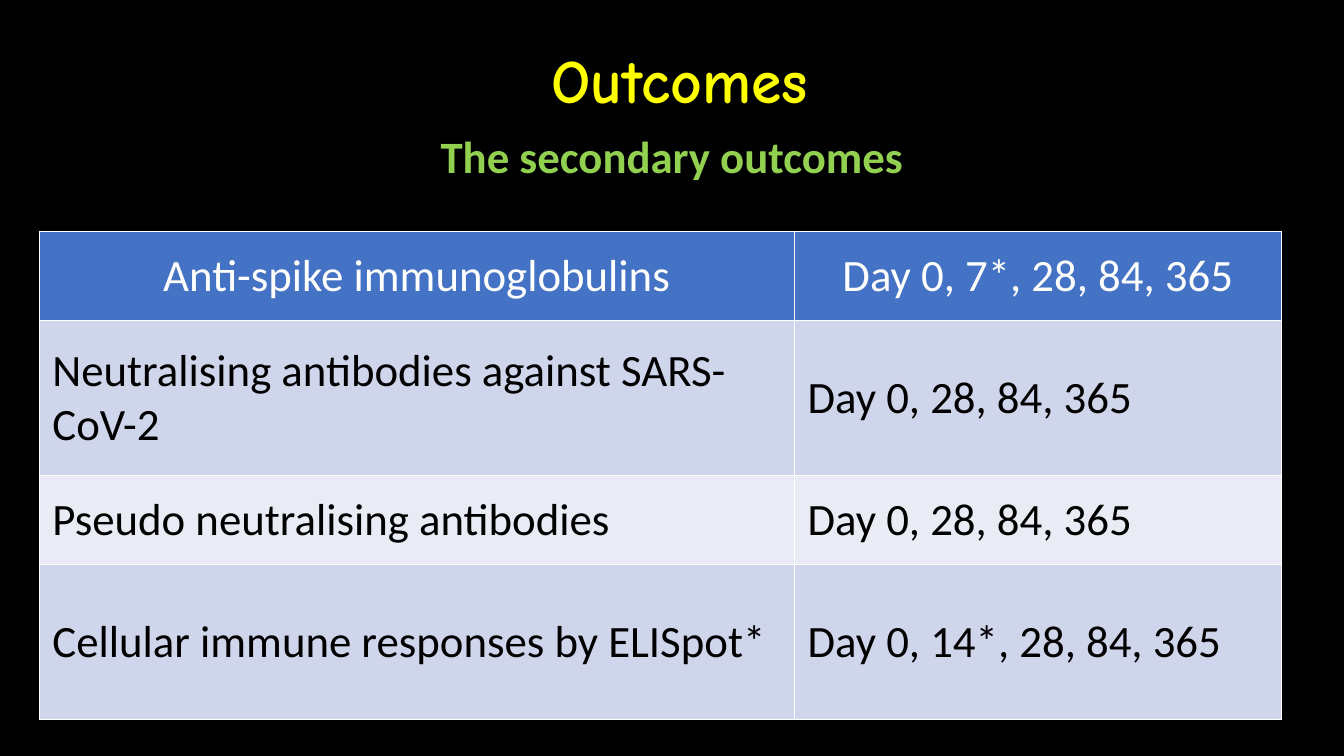
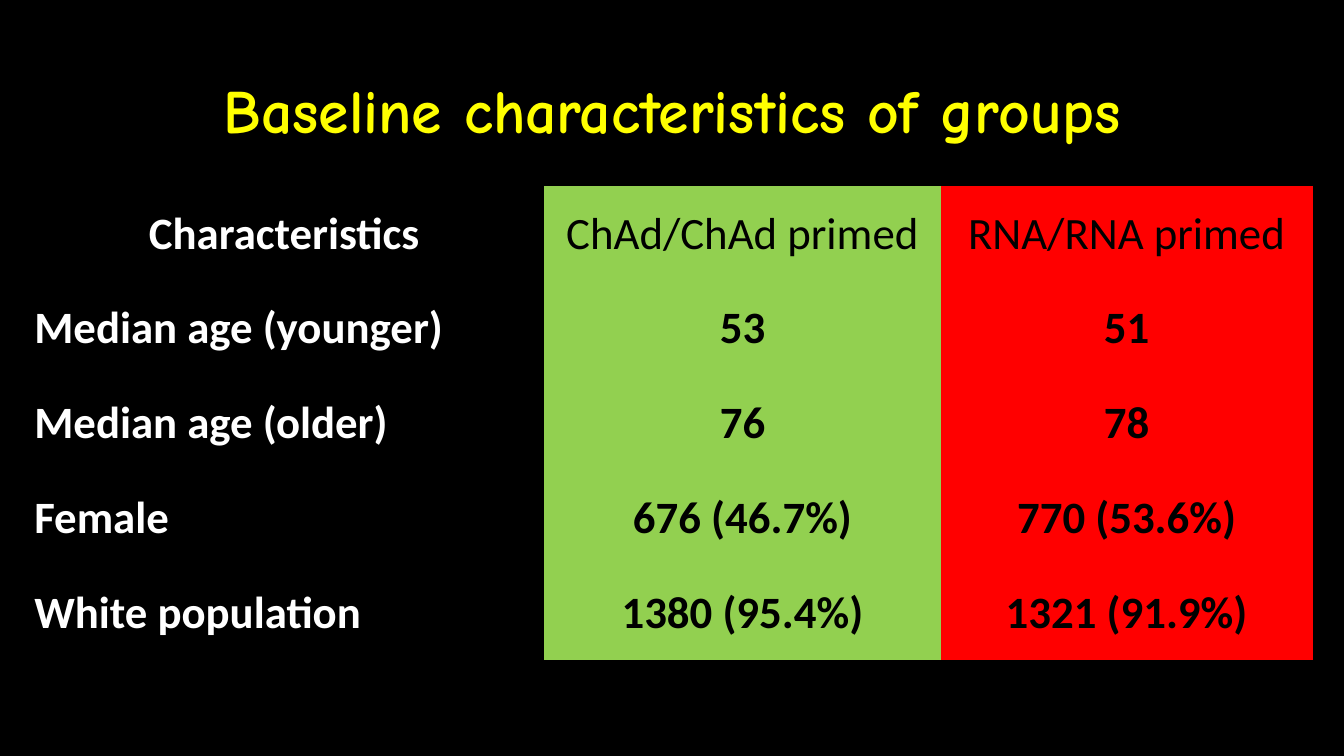
"""Build two slides of trial tables: secondary outcomes and baseline characteristics."""
from lxml import etree
from pptx import Presentation
from pptx.dml.color import RGBColor
from pptx.enum.text import MSO_ANCHOR, MSO_AUTO_SIZE, PP_ALIGN
from pptx.oxml.ns import qn
from pptx.util import Pt

PX = 9144
LEFT, MID = PP_ALIGN.LEFT, PP_ALIGN.CENTER
CENTRE = MSO_ANCHOR.MIDDLE
FIXED, GROW = MSO_AUTO_SIZE.NONE, MSO_AUTO_SIZE.SHAPE_TO_FIT_TEXT
TITLE_ONLY = 5
INK = {
    "black": "000000", "white": "FFFFFF", "yellow": "FFFF00", "green": "92D050",
    "red": "FF0000", "blue": "4472C4", "mist": "CFD5EA", "pale": "E9EBF5",
}


def write(frame, text, size=32, font="Calibri", color="black", bold=False,
          align=MID, line=None, gap=None):
    """Put one formatted paragraph into a text frame."""
    frame.word_wrap = True
    para = frame.paragraphs[0]
    para.alignment = align
    para.line_spacing = line
    para.space_before = para.space_after = gap
    run = para.add_run()
    run.text = text
    run.font.size, run.font.name, run.font.bold = Pt(size), font, bold
    run.font.color.rgb = RGBColor.from_string(INK[color])


def outline(cell, color=None):
    """Draw thin borders round a cell, or clear them."""
    props = cell._tc.get_or_add_tcPr()
    for side in ("lnL", "lnR", "lnT", "lnB"):
        edge = etree.SubElement(props, qn(f"a:{side}"), w=str(Pt(1)))
        if color:
            fill = etree.SubElement(edge, qn("a:solidFill"))
            etree.SubElement(fill, qn("a:srgbClr"), val=INK[color])
        else:
            etree.SubElement(edge, qn("a:noFill"))


pages = [
    {
        "title": "Outcomes", "spot": (99, 10),
        "sub": "The secondary outcomes",
        "at": (39, 230), "cols": (749, 483), "rows": (88, 154, 88, 154),
        "inset": (13, 6), "border": "white",
        "cells": [
            ("Anti-spike immunoglobulins", "Day 0, 7*, 28, 84, 365"),
            ("Neutralising antibodies against SARS-CoV-2", "Day 0, 28, 84, 365"),
            ("Pseudo neutralising antibodies", "Day 0, 28, 84, 365"),
            ("Cellular immune responses by ELISpot*", "Day 0, 14*, 28, 84, 365"),
        ],
        "fills": [["blue"] * 2, ["mist"] * 2, ["pale"] * 2, ["mist"] * 2],
    },
    {
        "title": "Baseline characteristics of groups", "spot": (92, 40),
        "sub": None,
        "at": (24, 185), "cols": (516, 393, 369), "rows": (94,) * 5,
        "inset": (10, 5), "border": None,
        "cells": [
            ("Characteristics", "ChAd/ChAd primed", "RNA/RNA primed"),
            ("Median age (younger)", "53", "51"),
            ("Median age (older)", "76", "78"),
            ("Female", "676 (46.7%)", "770 (53.6%)"),
            ("White population", "1380 (95.4%)", "1321 (91.9%)"),
        ],
        "fills": [["black", "green", "red"]] * 5,
    },
]

prs = Presentation()
prs.slide_width, prs.slide_height = 1333 * PX, 750 * PX
back = prs.slide_master.background.fill
back.solid()
back.fore_color.rgb = RGBColor.from_string(INK["black"])

for page in pages:
    slide = prs.slides.add_slide(prs.slide_layouts[TITLE_ONLY])
    title = slide.shapes.title
    title.left, title.top = (n * PX for n in page["spot"])
    title.width, title.height = 1150 * PX, 145 * PX
    title.text_frame.auto_size = FIXED
    title.text_frame.vertical_anchor = CENTRE
    write(title.text_frame, page["title"], size=44, font="Comic Neue",
          color="yellow", bold=True, line=0.9)

    if page["sub"]:
        box = slide.shapes.add_textbox(333 * PX, 123 * PX, 667 * PX, 64 * PX)
        box.text_frame.auto_size = GROW
        write(box.text_frame, page["sub"], color="green", bold=True, gap=Pt(12))

    cols, rows = page["cols"], page["rows"]
    left, top = page["at"]
    grid = slide.shapes.add_table(len(rows), len(cols), left * PX, top * PX,
                                  sum(cols) * PX, sum(rows) * PX).table
    for col, width in zip(grid.columns, cols):
        col.width = width * PX
    for row, height in zip(grid.rows, rows):
        row.height = height * PX

    side, edge = (n * PX for n in page["inset"])
    for r, texts in enumerate(page["cells"]):
        for c, text in enumerate(texts):
            cell, fill = grid.cell(r, c), page["fills"][r][c]
            outline(cell, page["border"])
            cell.fill.solid()
            cell.fill.fore_color.rgb = RGBColor.from_string(INK[fill])
            cell.vertical_anchor = CENTRE
            cell.margin_left = cell.margin_right = side
            cell.margin_top = cell.margin_bottom = edge
            plain = page["border"] is not None
            write(cell.text_frame, text,
                  color="white" if fill in ("blue", "black") else "black",
                  bold=not plain and (r > 0 or c == 0),
                  align=MID if r == 0 or (c > 0 and not plain) else LEFT)

prs.save("out.pptx")
